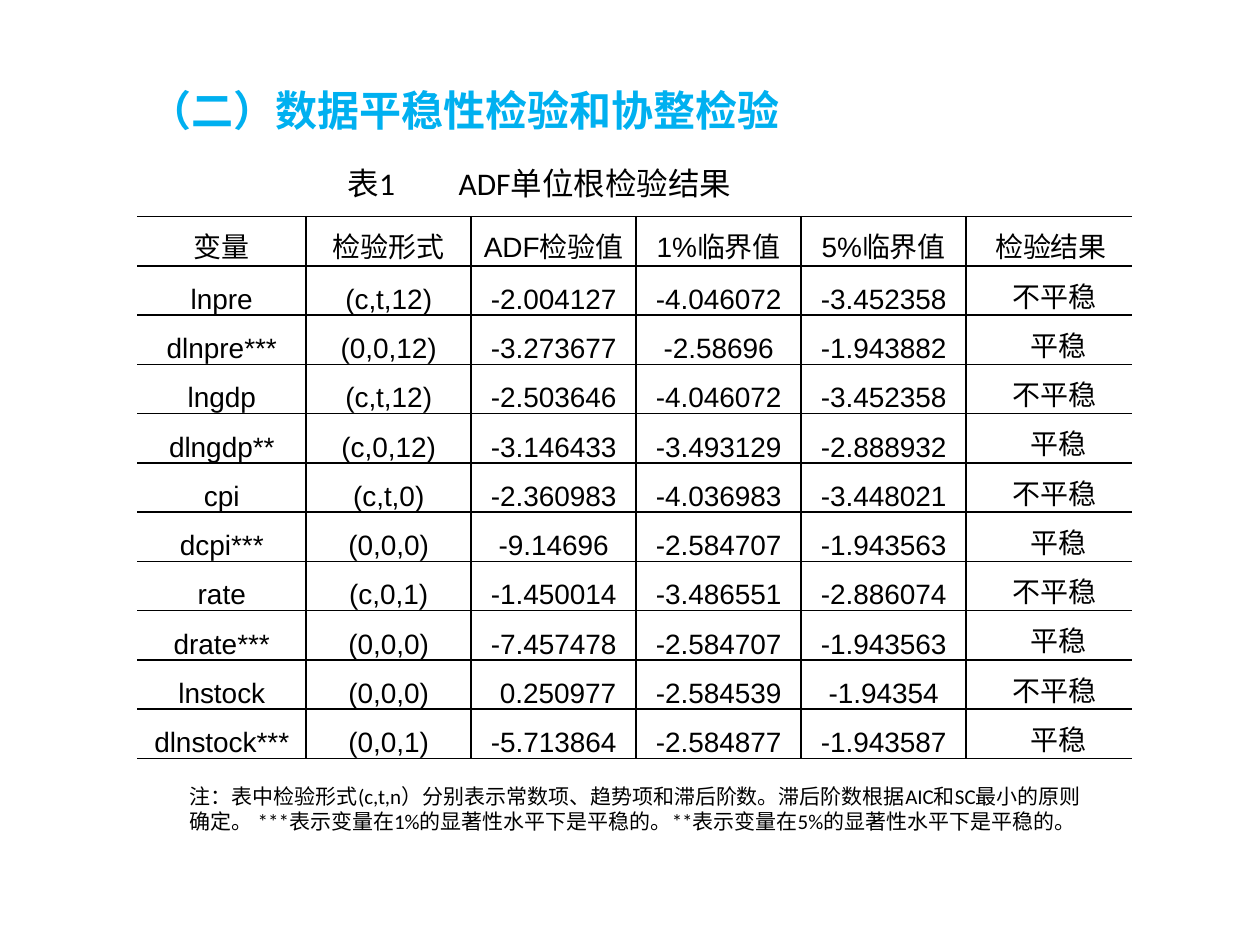
from dataclasses import dataclass

from lxml.etree import SubElement
from pptx import Presentation
from pptx.dml.color import RGBColor
from pptx.enum.text import MSO_VERTICAL_ANCHOR as Anchor, PP_ALIGN as Align
from pptx.oxml.ns import qn
from pptx.slide import Slide
from pptx.table import _Cell as Cell
from pptx.text.text import _Paragraph as Paragraph
from pptx.util import Pt

BLACK = "000000"
BLUE = "00B0F0"
COLUMN_WIDTHS = (96.5, 94.3, 94.3, 94.3, 94.3, 95)
ROW_HEIGHT = 28.15
SIDE_MARGIN = 5

HEADER = ("变量", "检验形式", "ADF检验值", "1%临界值", "5%临界值", "检验结果")
TESTS = (
    ("lnpre", "(c,t,12)", "-2.004127", "-4.046072", "-3.452358", "不平稳"),
    ("dlnpre***", "(0,0,12)", "-3.273677", "-2.58696", "-1.943882", "平稳"),
    ("lngdp", "(c,t,12)", "-2.503646", "-4.046072", "-3.452358", "不平稳"),
    ("dlngdp**", "(c,0,12)", "-3.146433", "-3.493129", "-2.888932", "平稳"),
    ("cpi", "(c,t,0)", "-2.360983", "-4.036983", "-3.448021", "不平稳"),
    ("dcpi***", "(0,0,0)", "-9.14696", "-2.584707", "-1.943563", "平稳"),
    ("rate", "(c,0,1)", "-1.450014", "-3.486551", "-2.886074", "不平稳"),
    ("drate***", "(0,0,0)", "-7.457478", "-2.584707", "-1.943563", "平稳"),
    ("lnstock", "(0,0,0)", "0.250977", "-2.584539", "-1.94354", "不平稳"),
    ("dlnstock***", "(0,0,1)", "-5.713864", "-2.584877", "-1.943587", "平稳"),
)
# Extra left margin that moves these centred entries slightly to the right
NUDGES = {"检验结果": 2, "不平稳": 6, "平稳": 10, "0.250977": 5}


@dataclass
class TextBlock:
    text: str
    left: float
    top: float
    width: float
    height: float
    size: float
    color: str = BLACK
    bold: bool = False
    tab: float | None = None


TEXT_BLOCKS = (
    TextBlock(
        "注：表中检验形式(c,t,n）分别表示常数项、趋势项和滞后阶数。"
        "滞后阶数根据AIC和SC最小的原则确定。 ***表示变量在1%的显著性水平下是平稳的。"
        "**表示变量在5%的显著性水平下是平稳的。",
        101.5, 444.2, 523.4, 51, 12,
    ),
    TextBlock("表1\tADF单位根检验结果", 191.5, 90, 444, 29, 18, tab=63.5),
    TextBlock("（二）数据平稳性检验和协整检验", 78.5, 44.6, 540, 58, 24, BLUE, bold=True),
)


def rgb(color: str) -> RGBColor:
    return RGBColor.from_string(color)


def set_font(para: Paragraph, name: str, size: float, color: str, bold: bool = False) -> None:
    font = para.font
    font.name, font.size, font.bold = name, Pt(size), bold
    font.color.rgb = rgb(color)


def add_tab_stop(para: Paragraph, position: float) -> None:
    properties = para._p.get_or_add_pPr()
    stops = properties.makeelement(qn("a:tabLst"), {})
    SubElement(stops, qn("a:tab"), pos=str(Pt(position)), algn="l")
    properties.insert(0, stops)


def add_text(page: Slide, block: TextBlock) -> None:
    box = page.shapes.add_textbox(
        Pt(block.left), Pt(block.top), Pt(block.width), Pt(block.height)
    )
    box.text_frame.word_wrap = True
    para = box.text_frame.paragraphs[0]
    para.add_run().text = block.text
    set_font(para, "Calibri", block.size, block.color, block.bold)
    if block.tab is not None:
        add_tab_stop(para, block.tab)


def set_borders(cell: Cell, visible: dict[str, bool]) -> None:
    properties = cell._tc.get_or_add_tcPr()
    for side, shown in visible.items():
        line = SubElement(properties, qn(f"a:ln{side}"), w=str(Pt(1)))
        if shown:
            fill = SubElement(line, qn("a:solidFill"))
            SubElement(fill, qn("a:srgbClr"), val=BLACK)
        else:
            SubElement(line, qn("a:noFill"))


def fill_cell(cell: Cell, text: str) -> None:
    cell.margin_left = Pt(SIDE_MARGIN + NUDGES.get(text, 0))
    cell.margin_right = Pt(SIDE_MARGIN)
    cell.margin_top = cell.margin_bottom = Pt(0)
    cell.vertical_anchor = Anchor.BOTTOM
    cell.fill.background()
    para = cell.text_frame.paragraphs[0]
    para.add_run().text = text
    para.alignment = Align.CENTER
    set_font(para, "Arial", 16, BLACK)


def add_results_table(page: Slide) -> None:
    rows = (HEADER, *TESTS)
    table = page.shapes.add_table(
        len(rows), len(HEADER), Pt(78.5), Pt(123.8),
        Pt(sum(COLUMN_WIDTHS)), Pt(ROW_HEIGHT * len(rows)),
    ).table
    table.first_row = table.horz_banding = False
    for column, width in zip(table.columns, COLUMN_WIDTHS):
        column.width = Pt(width)
    last = len(HEADER) - 1
    for r, texts in enumerate(rows):
        table.rows[r].height = Pt(ROW_HEIGHT)
        for c, text in enumerate(texts):
            cell = table.cell(r, c)
            set_borders(cell, {"L": c > 0, "R": c < last, "T": True, "B": True})
            fill_cell(cell, text)


def main() -> None:
    deck = Presentation()
    deck.slide_width, deck.slide_height = Pt(720), Pt(540)
    page = deck.slides.add_slide(deck.slide_layouts[6])
    add_results_table(page)
    for block in TEXT_BLOCKS:
        add_text(page, block)
    deck.save("out.pptx")


if __name__ == "__main__":
    main()
